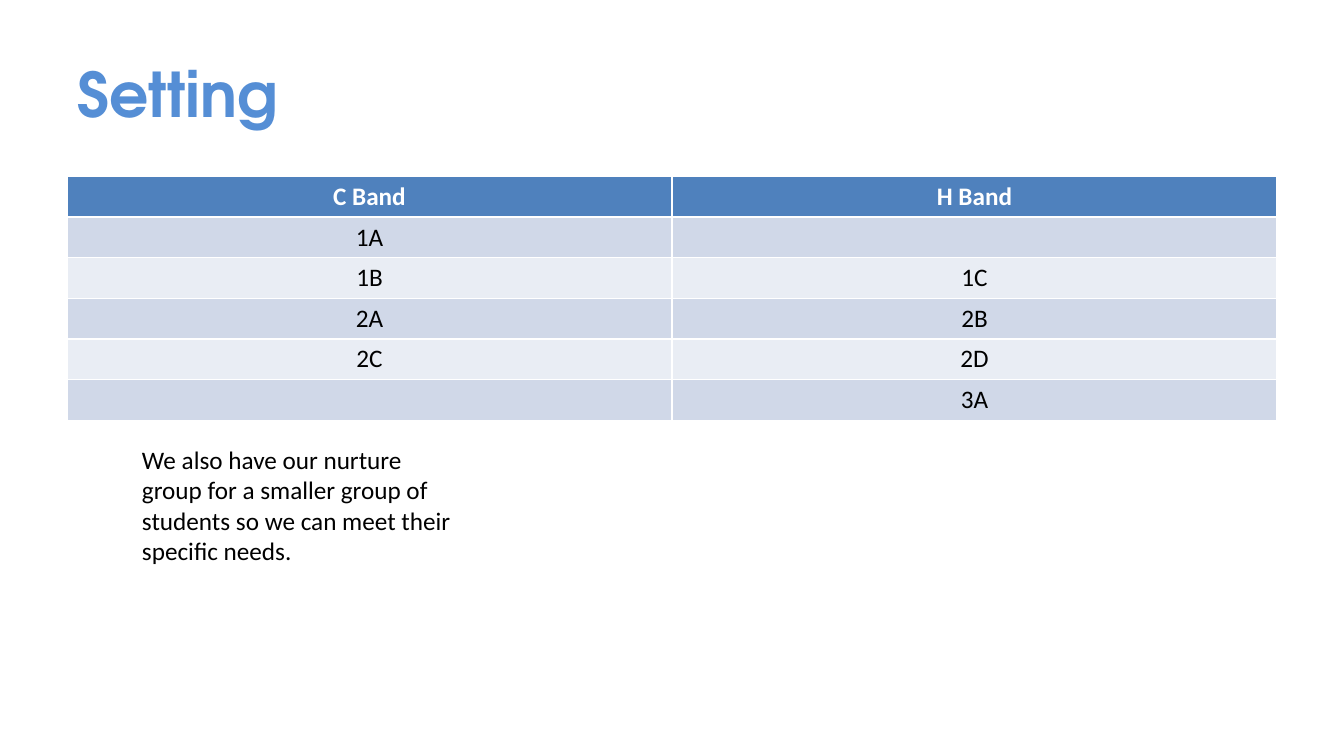
"""Build the Setting slide: a table of bands and a note on the nurture group."""
from pptx import Presentation
from pptx.dml.color import RGBColor
from pptx.enum.text import MSO_ANCHOR, PP_ALIGN
from pptx.util import Inches, Pt

LEFT, CENTER = PP_ALIGN.LEFT, PP_ALIGN.CENTER
MIDDLE = MSO_ANCHOR.MIDDLE
TITLE_ONLY = 5

HEADING = "Setting"
BANDS = [
    ("C Band", "H Band"),
    ("1A", ""),
    ("1B", "1C"),
    ("2A", "2B"),
    ("2C", "2D"),
    ("", "3A"),
]
NOTE = ("We also have our nurture group for a smaller group of students "
        "so we can meet their specific needs.")

COLORS = {"heading": "558ED5", "header": "4F81BD", "odd": "D0D8E8",
          "even": "E9EDF4", "white": "FFFFFF", "black": "000000"}
HEADING_FONT = {"name": "TeX Gyre Adventor", "size": Pt(44), "bold": True}
HEADER_FONT = {"name": "Calibri", "size": Pt(18), "bold": True}
BODY_FONT = {"name": "Calibri", "size": Pt(18), "bold": False}

SLIDE_W, SLIDE_H = Inches(13.33), Inches(7.5)
CONTENT_W = Inches(12)
MARGIN = (SLIDE_W - CONTENT_W) // 2
ROW_H = Inches(2.42) // len(BANDS)


def write(paragraph, text, font, color, align=LEFT):
    paragraph.alignment = align
    paragraph.text = text
    for key, value in font.items():
        setattr(paragraph.font, key, value)
    paragraph.font.color.rgb = RGBColor.from_string(COLORS[color])
    for run in paragraph.runs:
        for key, value in font.items():
            setattr(run.font, key, value)
        run.font.color.rgb = RGBColor.from_string(COLORS[color])


def add_heading(slide):
    heading = slide.shapes.title
    heading.left, heading.top = MARGIN, Inches(0.3)
    heading.width, heading.height = CONTENT_W, Inches(1.25)
    heading.text_frame.vertical_anchor = MIDDLE
    write(heading.text_frame.paragraphs[0], HEADING, HEADING_FONT, "heading")


def add_bands(slide):
    bands = slide.shapes.add_table(
        len(BANDS), len(BANDS[0]), MARGIN, Inches(1.75),
        CONTENT_W, ROW_H * len(BANDS)).table
    for r, groups in enumerate(BANDS):
        if r == 0:
            fill, font, color = "header", HEADER_FONT, "white"
        else:
            fill, font, color = ("odd" if r % 2 else "even"), BODY_FONT, "black"
        for c, group in enumerate(groups):
            cell = bands.cell(r, c)
            cell.fill.solid()
            cell.fill.fore_color.rgb = RGBColor.from_string(COLORS[fill])
            write(cell.text_frame.paragraphs[0], group, font, color, CENTER)


def add_note(slide):
    note = slide.shapes.add_textbox(
        Inches(1.31), Inches(4.36), Inches(3.31), Inches(1.31)).text_frame
    note.word_wrap = True
    write(note.paragraphs[0], NOTE, BODY_FONT, "black")


def main():
    deck = Presentation()
    deck.slide_width, deck.slide_height = SLIDE_W, SLIDE_H
    slide = deck.slides.add_slide(deck.slide_layouts[TITLE_ONLY])
    add_heading(slide)
    add_note(slide)
    add_bands(slide)
    deck.save("out.pptx")


if __name__ == "__main__":
    main()
